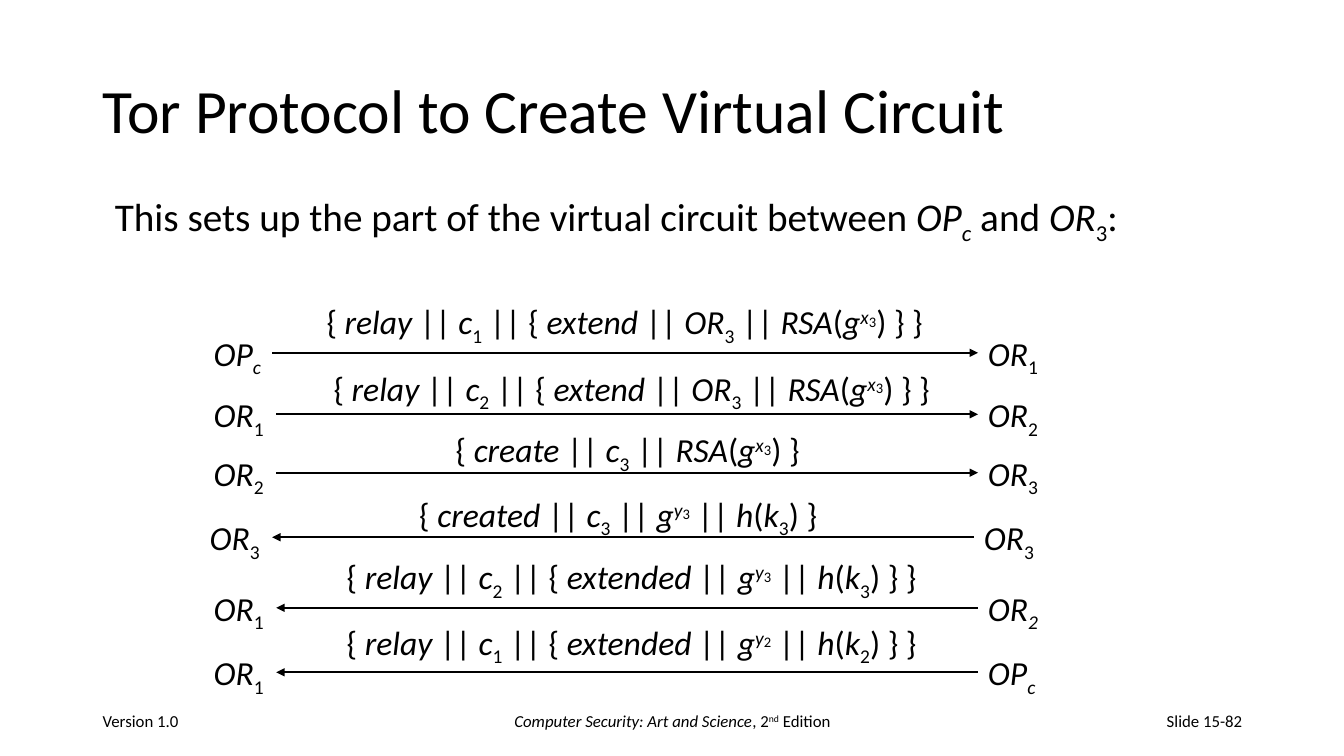
from pptx import Presentation
from pptx.dml.color import RGBColor
from pptx.enum import shapes, text
from pptx.oxml.ns import qn
from pptx.util import Inches, Pt
from lxml import etree

COLORS = {"ink": "000000", "paper": "FFFFFF"}
INK = RGBColor.from_string(COLORS["ink"])
LEFT, CENTER, RIGHT = text.PP_ALIGN.LEFT, text.PP_ALIGN.CENTER, text.PP_ALIGN.RIGHT

prs = Presentation()
prs.slide_width, prs.slide_height = Inches(13.33), Inches(7.5)
slide = prs.slides.add_slide(prs.slide_layouts[6])
slide.background.fill.solid()
slide.background.fill.fore_color.rgb = RGBColor.from_string(COLORS["paper"])


def add_text(box, runs, size, align=LEFT, fixed=False):
    """Add (text, style) runs; style letters: i italic, _ subscript, ^ superscript, s small."""
    label = slide.shapes.add_textbox(*[Inches(v) for v in box])
    frame = label.text_frame
    frame.word_wrap = fixed
    if fixed:
        frame.vertical_anchor = text.MSO_ANCHOR.MIDDLE
    else:
        frame.auto_size = text.MSO_AUTO_SIZE.SHAPE_TO_FIT_TEXT
    paragraph = frame.paragraphs[0]
    paragraph.alignment = align
    for words, style in runs:
        run = paragraph.add_run()
        run.text = words
        run.font.name = "Calibri"
        run.font.size = Pt(18 if "s" in style else size)
        run.font.italic = "i" in style
        run.font.color.rgb = INK
        if "_" in style:
            run.font._element.set("baseline", "-25000")
        elif "^" in style:
            run.font._element.set("baseline", "30000")
    return label


# Title, introduction and footer
title = add_text((0.92, 0.4, 11.5, 1.45),
                 [("Tor Protocol to Create Virtual Circuit", "")], 44, fixed=True)
title.text_frame.paragraphs[0].line_spacing = 0.9

client = [("OP", "i"), ("c", "_i")]
router1, router2, router3 = [[("OR", "i"), (n, "_")] for n in "123"]
router2_slanted = [("OR", "i"), ("2", "_i")]

add_text((1.04, 1.86, 10.2, 0.57),
         [("This sets up the part of the virtual circuit between ", ""), *client,
          (" and ", ""), *router3, (":", "")], 28)

footers = [
    (0.92, 3, LEFT, [("Version 1.0", "")]),
    (4.42, 4.5, CENTER, [("Computer Security: Art and Science", "i"), (", 2", ""),
                         ("nd", "^"), (" Edition", "")]),
    (9.42, 3, RIGHT, [("Slide 15-82", "")]),
]
for left, width, align, runs in footers:
    add_text((left, 6.95, width, 0.4), runs, 12, align, fixed=True)

# Parts of the messages
bar, opening, nested, closing = (" || ", ""), ("{ ", ""), (" || { ", ""), (") } }", "")
circuit1, circuit2, circuit3 = [[("c", "i"), (n, "_")] for n in "123"]
rsa_x3 = [("RSA", "i"), ("(", ""), ("g", "i"), ("x", "^i"), ("3", "^s")]
reply2, reply3 = [[("g", "i"), ("y", "^i"), (n, "^s"), bar,
                   ("h", "i"), ("(", ""), ("k", "i"), (n, "_")] for n in "23"]
relay1, relay2 = [[opening, ("relay", "i"), bar, *circuit, nested]
                  for circuit in (circuit1, circuit2)]
extend = [("extend", "i"), bar, *router3, bar, *rsa_x3, closing]
extended = [("extended", "i"), bar]
create = [opening, ("create", "i"), bar, *circuit3, bar, *rsa_x3, (") }", "")]
created = [opening, ("created", "i"), bar, *circuit3, bar, *reply3, (") }", "")]

# left party, right party, left edge, top, arrow end, message, message left, top, width
exchanges = [
    (client, router1, 2.02, 3.25, "tailEnd", relay1 + extend, 3.14, 2.94, 6.21),
    (router1, router2, 2.02, 3.86, "tailEnd", relay2 + extend, 3.21, 3.6, 6.21),
    (router2, router3, 2.02, 4.44, "tailEnd", create, 4.42, 4.21, 3.68),
    (router3, router3, 1.98, 5.08, "headEnd", created, 4.06, 4.85, 4.26),
    (router1, router2_slanted, 2.02, 5.78, "headEnd",
     relay2 + extended + reply3 + [closing], 3.34, 5.47, 5.95),
    (router1, client, 2.02, 6.42, "headEnd",
     relay1 + extended + reply2 + [closing], 3.34, 6.12, 5.98),
]
for near, far, left, top, arrow_end, message, message_left, message_top, width in exchanges:
    near_party, far_party = [
        add_text((x, top, 0.68 if party is client else 0.72, 0.5), party, 24)
        for party, x in ((near, left), (far, left + 7.68))]
    arrow = slide.shapes.add_connector(shapes.MSO_CONNECTOR.STRAIGHT, 0, 0, 0, 0)
    arrow.begin_connect(near_party, 3)
    arrow.end_connect(far_party, 1)
    arrow.line.color.rgb = INK
    arrow.line.width = Pt(1.5)
    etree.SubElement(arrow.line._get_or_add_ln(), qn("a:" + arrow_end), type="triangle")
    etree.SubElement(arrow._element.spPr, qn("a:effectLst"))
    add_text((message_left, message_top, width, 0.5), message, 24)

prs.save("out.pptx")
